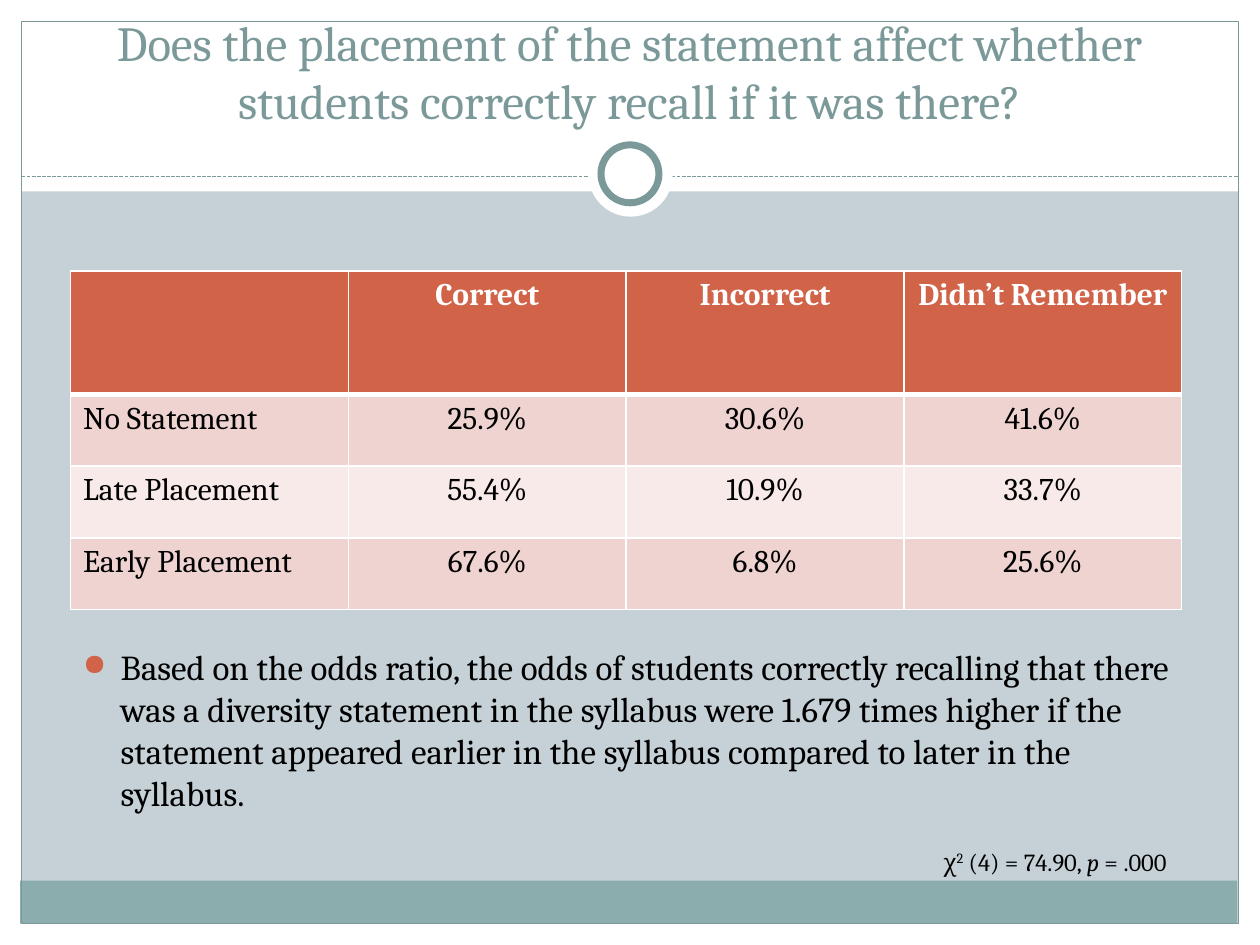
from dataclasses import dataclass

from lxml import etree
from pptx import Presentation
from pptx.dml.color import RGBColor
from pptx.enum.dml import MSO_LINE
from pptx.enum.shapes import MSO_CONNECTOR, MSO_SHAPE
from pptx.enum.text import MSO_ANCHOR, PP_ALIGN
from pptx.oxml.ns import qn
from pptx.util import Inches, Pt

RECTANGLE = MSO_SHAPE.RECTANGLE
ELLIPSE = MSO_SHAPE.OVAL
STRAIGHT = MSO_CONNECTOR.STRAIGHT
DASHED = MSO_LINE.SQUARE_DOT
LEFT, CENTER = PP_ALIGN.LEFT, PP_ALIGN.CENTER
TOP, BOTTOM = MSO_ANCHOR.TOP, MSO_ANCHOR.BOTTOM


@dataclass(frozen=True)
class Theme:
    font: str = "Cambria"
    background: str = "C5D1D7"
    white: str = "FFFFFF"
    text: str = "000000"
    frame: str = "7C999A"
    footer: str = "8CADAE"
    accent: str = "D16349"
    bands: tuple = ("EED3D0", "F7EAE9")
    title_size: float = 28
    body_size: float = 20
    table_size: float = 18
    note_size: float = 14


THEME = Theme()
TITLE = (
    "Does the placement of the statement affect whether "
    "students correctly recall if it was there?"
)
FINDING = (
    "Based on the odds ratio, the odds of students correctly recalling that "
    "there was a diversity statement in the syllabus were 1.679 times higher if "
    "the statement appeared earlier in the syllabus compared to later in the syllabus."
)
RECALL_ROWS = [
    ["", "Correct", "Incorrect", "Didn’t Remember"],
    ["No Statement", "25.9%", "30.6%", "41.6%"],
    ["Late Placement", "55.4%", "10.9%", "33.7%"],
    ["Early Placement", "67.6%", "6.8%", "25.6%"],
]


def rgb(color):
    return RGBColor.from_string(color)


def add_shape(slide, kind, box, fill=None, line=None, width=0.75):
    shape = slide.shapes.add_shape(kind, *map(Inches, box))
    shape.shadow.inherit = False
    if fill:
        shape.fill.solid()
        shape.fill.fore_color.rgb = rgb(fill)
    else:
        shape.fill.background()
    if line:
        shape.line.color.rgb = rgb(line)
        shape.line.width = Pt(width)
    else:
        shape.line.fill.background()


def add_dashed_line(slide, left, right, top):
    connector = slide.shapes.add_connector(
        STRAIGHT, Inches(left), Inches(top), Inches(right), Inches(top)
    )
    connector.line.color.rgb = rgb(THEME.frame)
    connector.line.width = Pt(0.75)
    connector.line.dash_style = DASHED
    etree.SubElement(connector._element.spPr, qn("a:effectLst"))


def add_run(paragraph, text, size, color=THEME.text, bold=False, italic=False):
    run = paragraph.add_run()
    run.text = text
    font = run.font
    font.name, font.size = THEME.font, Pt(size)
    font.bold, font.italic = bold, italic
    font.color.rgb = rgb(color)
    return run


def add_text_box(slide, box, anchor=TOP, wrap=True):
    frame = slide.shapes.add_textbox(*map(Inches, box)).text_frame
    frame.word_wrap = wrap
    frame.vertical_anchor = anchor
    return frame.paragraphs[0]


def add_bullet(paragraph):
    paragraph.space_before = Pt(4)
    properties = paragraph._p.get_or_add_pPr()
    properties.set("marL", str(Inches(0.3)))
    properties.set("indent", str(Inches(-0.3)))
    color = etree.SubElement(properties, qn("a:buClr"))
    etree.SubElement(color, qn("a:srgbClr"), val=THEME.accent)
    etree.SubElement(properties, qn("a:buSzPct"), val="85000")
    etree.SubElement(properties, qn("a:buChar"), char="●")


def set_borders(cell, **widths):
    properties = cell._tc.get_or_add_tcPr()
    for side in "LRTB":
        width = Pt(widths.get(side, 1))
        line = etree.SubElement(properties, qn(f"a:ln{side}"), w=str(width))
        fill = etree.SubElement(line, qn("a:solidFill"))
        etree.SubElement(fill, qn("a:srgbClr"), val=THEME.white)


def fill_cell(cell, text, row, column):
    header = row == 0
    set_borders(cell, B=3 if header else 1, T=3 if row == 1 else 1)
    cell.fill.solid()
    cell.fill.fore_color.rgb = rgb(THEME.accent if header else THEME.bands[(row - 1) % 2])
    paragraph = cell.text_frame.paragraphs[0]
    paragraph.alignment = CENTER if column else LEFT
    if text:
        color = THEME.white if header else THEME.text
        add_run(paragraph, text, THEME.table_size, color, bold=header)


def add_recall_table(slide, box, row_heights):
    table = slide.shapes.add_table(
        len(RECALL_ROWS), len(RECALL_ROWS[0]), *map(Inches, box)
    ).table
    for row, (height, texts) in enumerate(zip(row_heights, RECALL_ROWS)):
        table.rows[row].height = Inches(height)
        for column, text in enumerate(texts):
            fill_cell(table.cell(row, column), text, row, column)


def add_frame(slide):
    margins = [
        (0, 7.33, 10, 0.17),
        (0, 0, 10, 1.52),
        (0, 0, 0.17, 7.5),
        (9.83, 0, 0.17, 7.5),
    ]
    for box in margins:
        add_shape(slide, RECTANGLE, box, THEME.white)
    add_shape(slide, RECTANGLE, (0.16, 6.99, 9.66, 0.34), THEME.footer)
    add_shape(slide, RECTANGLE, (0.17, 0.17, 9.66, 7.16), line=THEME.frame)
    add_dashed_line(slide, 0.17, 9.83, 1.4)
    add_shape(slide, ELLIPSE, (4.67, 1.05, 0.67, 0.67), THEME.white)
    add_shape(slide, ELLIPSE, (4.77, 1.15, 0.46, 0.46), THEME.white, THEME.frame, 4)


def add_title(slide):
    paragraph = add_text_box(slide, (0.33, 0.25, 9.33, 0.83), BOTTOM)
    paragraph.alignment = CENTER
    add_run(paragraph, TITLE, THEME.title_size, THEME.frame)


def add_statistic(slide):
    paragraph = add_text_box(slide, (7.39, 6.67, 2.24, 0.34), wrap=False)
    add_run(paragraph, "χ", THEME.note_size)
    exponent = add_run(paragraph, "2", THEME.note_size)
    exponent._r.get_or_add_rPr().set("baseline", "30000")
    add_run(paragraph, " (4) = 74.90, ", THEME.note_size)
    add_run(paragraph, "p", THEME.note_size, italic=True)
    add_run(paragraph, " = .000", THEME.note_size)


def add_finding(slide):
    paragraph = add_text_box(slide, (0.56, 5.07, 8.82, 1.6))
    add_bullet(paragraph)
    add_run(paragraph, FINDING, THEME.body_size)


def main():
    presentation = Presentation()
    presentation.slide_width, presentation.slide_height = Inches(10), Inches(7.5)
    slide = presentation.slides.add_slide(presentation.slide_layouts[6])
    slide.background.fill.solid()
    slide.background.fill.fore_color.rgb = rgb(THEME.background)
    add_frame(slide)
    add_title(slide)
    add_recall_table(slide, (0.56, 2.15, 8.82, 2.68), (0.98, 0.57, 0.57, 0.57))
    add_statistic(slide)
    add_finding(slide)
    presentation.save("out.pptx")


if __name__ == "__main__":
    main()
